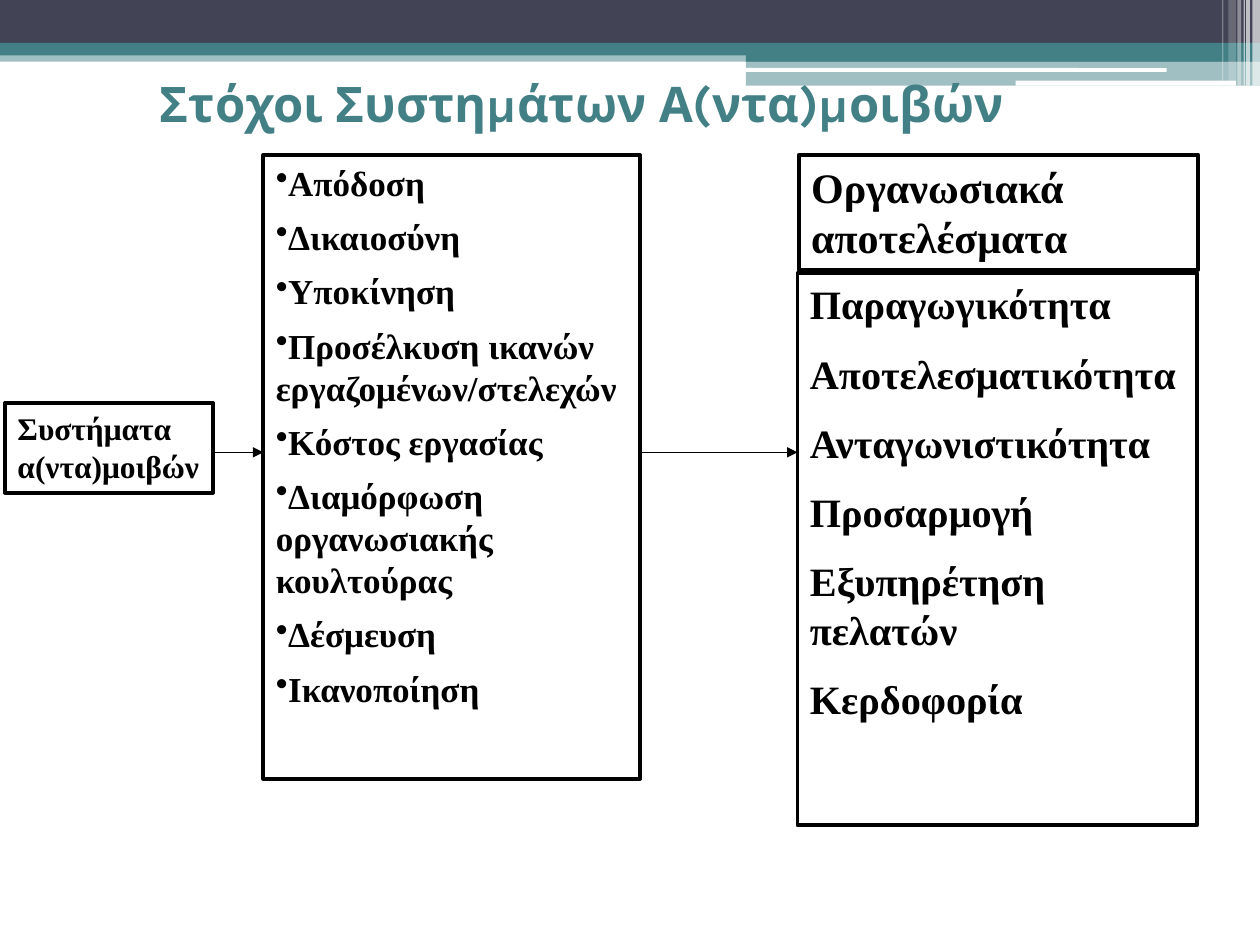
"""Build a slide that links reward systems to goals and organisational results."""
import lxml.etree
import pptx
import pptx.dml.color
import pptx.enum.shapes
import pptx.enum.text
import pptx.oxml.ns
import pptx.util

Inches = pptx.util.Inches
Pt = pptx.util.Pt
qn = pptx.oxml.ns.qn
KIND = pptx.enum.shapes.MSO_SHAPE
ANCHOR = pptx.enum.text.MSO_ANCHOR

COLORS = {"teal": "438086", "navy": "424456", "white": "FFFFFF", "black": "000000"}

BANDS = [
    ((0, 0.4, 10, 0.09), "teal", 50),
    ((0, 0, 10, 0.34), "navy", 100),
    ((0, 0.34, 10, 0.1), "teal", 100),
    ((5.92, 0.39, 4.08, 0.1), "teal", 100),
    ((5.92, 0.48, 4.08, 0.2), "teal", 50),
]
PILLS = [(5.91, 0.54, 3.35, 0.03), (8.06, 0.64, 1.75, 0.04)]
STRIPES = [
    (9.94, 0.06, 0.68, 65),
    (9.89, 0.03, 0.68, 65),
    (9.87, 0.01, 0.68, 60),
    (9.82, 0.03, 0.68, 40),
    (9.75, 0.06, 0.64, 20),
    (9.7, 0.01, 0.64, 30),
]

TITLE = "Στόχοι Συστημάτων Α(ντα)μοιβών"
GOALS = [
    "Απόδοση",
    "Δικαιοσύνη",
    "Υποκίνηση",
    "Προσέλκυση ικανών εργαζομένων/στελεχών",
    "Κόστος εργασίας",
    "Διαμόρφωση οργανωσιακής κουλτούρας",
    "Δέσμευση",
    "Ικανοποίηση",
]
RESULTS = [
    "Παραγωγικότητα",
    "Αποτελεσματικότητα",
    "Ανταγωνιστικότητα",
    "Προσαρμογή",
    "Εξυπηρέτηση πελατών",
    "Κερδοφορία",
]
BOXES = [
    ((2.09, 1.23, 2.99, 4.95), GOALS, 20, 0.05, 6, True),
    ((0.04, 3.2, 1.65, 0.71), ["Συστήματα α(ντα)μοιβών"], 18, 0.5, 0, False),
    ((6.33, 2.17, 3.17, 4.38), RESULTS, 23, 0.5, 0, False),
    ((6.34, 1.23, 3.17, 0.91), ["Οργανωσιακά αποτελέσματα"], 24, 0.5, 0, False),
]
ARROWS = [(1.69, 2.09), (5.08, 6.33)]
ARROW_Y = 3.59


def tint(name):
    return pptx.dml.color.RGBColor.from_string(COLORS[name])


def add_bar(slide, area, color, alpha=100, kind=KIND.RECTANGLE):
    bar = slide.shapes.add_shape(kind, *map(Inches, area))
    bar.shadow.inherit = False
    bar.line.fill.background()
    bar.fill.solid()
    bar.fill.fore_color.rgb = tint(color)
    if alpha < 100:
        hue = bar.fill._xPr.find(qn("a:solidFill"))[0]
        lxml.etree.SubElement(hue, qn("a:alpha"), val=str(alpha * 1000))


def add_words(para, words, font, size, color):
    run = para.add_run()
    run.text = words
    run.font.name = font
    run.font.size = Pt(size)
    run.font.bold = True
    run.font.color.rgb = tint(color)


def add_box(slide, area, items, size, before, after, bullet):
    box = slide.shapes.add_shape(KIND.RECTANGLE, *map(Inches, area))
    box.shadow.inherit = False
    box.fill.background()
    box.line.color.rgb = tint("black")
    box.line.width = Pt(2.25)
    frame = box.text_frame
    frame.word_wrap = True
    frame.vertical_anchor = ANCHOR.TOP
    for index, item in enumerate(items):
        para = frame.add_paragraph() if index else frame.paragraphs[0]
        para.alignment = pptx.enum.text.PP_ALIGN.LEFT
        para.space_before = Pt(round(size * before))
        para.space_after = Pt(after)
        if bullet:
            lxml.etree.SubElement(para._p.get_or_add_pPr(), qn("a:buChar"), char="•")
        add_words(para, item, "Times New Roman", size, "black")


def add_arrow(slide, start, end):
    ends = map(Inches, (start, ARROW_Y, end, ARROW_Y))
    arrow = slide.shapes.add_connector(pptx.enum.shapes.MSO_CONNECTOR.STRAIGHT, *ends)
    arrow.line.color.rgb = tint("black")
    arrow.line.width = Pt(0.75)
    lxml.etree.SubElement(arrow.line._get_or_add_ln(), qn("a:tailEnd"), type="triangle")
    lxml.etree.SubElement(arrow._element.spPr, qn("a:effectLst"))


def add_title(slide):
    box = slide.shapes.add_textbox(*map(Inches, (1.17, 0.62, 7.33, 0.4)))
    frame = box.text_frame
    frame.word_wrap = True
    frame.vertical_anchor = ANCHOR.MIDDLE
    add_words(frame.paragraphs[0], TITLE, "Karla", 28, "teal")


def main():
    deck = pptx.Presentation()
    deck.slide_width, deck.slide_height = Inches(10), Inches(7.5)
    slide = deck.slides.add_slide(deck.slide_layouts[6])
    for area, color, alpha in BANDS:
        add_bar(slide, area, color, alpha)
    for area in PILLS:
        add_bar(slide, area, "white", kind=KIND.ROUNDED_RECTANGLE)
    for left, width, height, alpha in STRIPES:
        add_bar(slide, (left, 0, width, height), "white", alpha)
    add_title(slide)
    for box in BOXES:
        add_box(slide, *box)
    for start, end in ARROWS:
        add_arrow(slide, start, end)
    deck.save("out.pptx")


if __name__ == "__main__":
    main()
